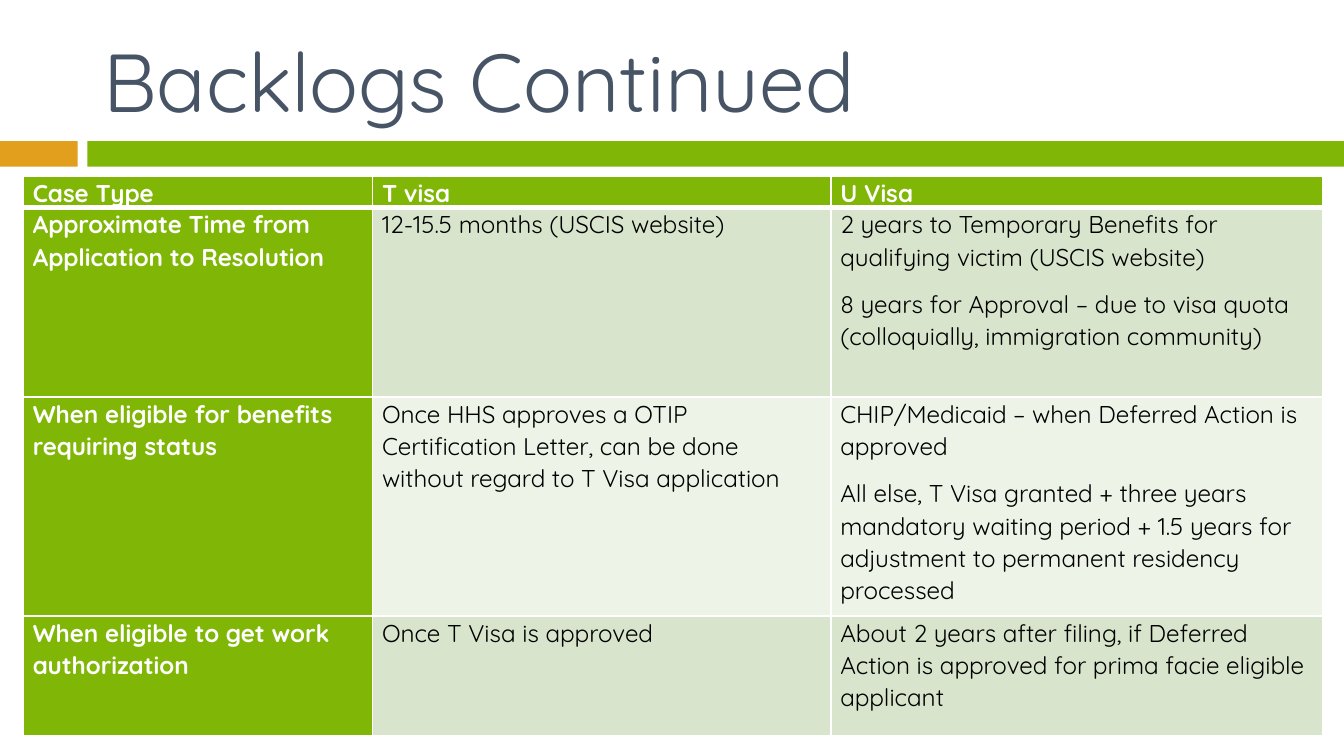
import pptx
import pptx.dml.color
import pptx.enum.shapes
import pptx.enum.text
import pptx.oxml.ns
import pptx.util
from dataclasses import dataclass
from lxml import etree

Cm = pptx.util.Cm
Pt = pptx.util.Pt
qn = pptx.oxml.ns.qn


@dataclass(frozen=True)
class Theme:
    font: str = "Quicksand"
    title: int = 44
    body: int = 13
    slate: str = "465466"
    gold: str = "E29F1D"
    green: str = "80B606"
    pale: str = "D8E5CC"
    mist: str = "EDF3E7"
    white: str = "FFFFFF"
    black: str = "000000"


THEME = Theme()

WIDTHS = (6.6, 8.66, 9.3)
HEIGHTS = (0.58, 3.58, 4.14, 2.26)

# Each cell is a list of paragraphs
ROWS = [
    [["Case Type"], ["T visa"], ["U Visa"]],
    [
        ["Approximate Time from Application to Resolution"],
        ["12-15.5 months (USCIS website)"],
        ["2 years to Temporary Benefits for qualifying victim (USCIS website)",
         "8 years for Approval – due to visa quota "
         "(colloquially, immigration community)"],
    ],
    [
        ["When eligible for benefits requiring status"],
        ["Once HHS approves a OTIP Certification Letter, can be done "
         "without regard to T Visa application"],
        ["CHIP/Medicaid – when Deferred Action is approved",
         "All else, T Visa granted + three years mandatory waiting period "
         "+ 1.5 years for adjustment to permanent residency processed"],
    ],
    [
        ["When eligible to get work authorization"],
        ["Once T Visa is approved"],
        ["About 2 years after filing, if Deferred Action is approved "
         "for prima facie eligible applicant"],
    ],
]


def rgb(code):
    return pptx.dml.color.RGBColor.from_string(code)


def write(frame, *texts, size, color, bold=False, line=1.0, gap=0):
    """Fill a text frame, with the gap between paragraphs in points."""
    frame.word_wrap = True
    for i, text in enumerate(texts):
        para = frame.paragraphs[0] if i == 0 else frame.add_paragraph()
        para.line_spacing = line
        para.space_after = Pt(gap if i < len(texts) - 1 else 0)
        run = para.add_run()
        run.text = text
        font = run.font
        font.name, font.size, font.bold = THEME.font, Pt(size), bold
        font.color.rgb = rgb(color)


def add_bar(slide, left, width, color):
    bar = slide.shapes.add_shape(
        pptx.enum.shapes.MSO_SHAPE.RECTANGLE,
        Cm(left), Cm(2.67), Cm(width), Cm(0.48))
    bar.shadow.inherit = False
    bar.fill.solid()
    bar.fill.fore_color.rgb = rgb(color)
    bar.line.fill.background()


def add_title(slide, text):
    box = slide.shapes.add_textbox(Cm(1.7), Cm(0.48), Cm(22.66), Cm(2.06))
    box.text_frame.vertical_anchor = pptx.enum.text.MSO_ANCHOR.MIDDLE
    write(box.text_frame, text, size=THEME.title, color=THEME.slate)


def add_edges(cell, top, bottom):
    """Draw white cell borders; widths are in points."""
    props = cell._tc.get_or_add_tcPr()
    for side, width in (("L", 1), ("R", 1), ("T", top), ("B", bottom)):
        edge = etree.SubElement(props, qn(f"a:ln{side}"), w=str(Pt(width)))
        fill = etree.SubElement(edge, qn("a:solidFill"))
        etree.SubElement(fill, qn("a:srgbClr"), val=THEME.white)


def add_cell(cell, texts, row, col):
    head = row == 0 or col == 0
    band = THEME.pale if row % 2 else THEME.mist
    cell.margin_left = cell.margin_right = Cm(0.18)
    cell.margin_top = cell.margin_bottom = 0
    add_edges(cell, top=3 if row == 1 else 1, bottom=3 if row == 0 else 1)
    cell.fill.solid()
    cell.fill.fore_color.rgb = rgb(THEME.green if head else band)
    write(cell.text_frame, *texts, size=THEME.body, bold=head,
          color=THEME.white if head else THEME.black, line=1.07, gap=8)


def add_grid(slide):
    grid = slide.shapes.add_table(
        len(ROWS), len(WIDTHS), Cm(0.44), Cm(3.33),
        Cm(sum(WIDTHS)), Cm(sum(HEIGHTS))).table
    grid.horz_banding = False
    for col, width in zip(grid.columns, WIDTHS):
        col.width = Cm(width)
    for row, height in zip(grid.rows, HEIGHTS):
        row.height = Cm(height)
    for r, cells in enumerate(ROWS):
        for c, texts in enumerate(cells):
            add_cell(grid.cell(r, c), texts, r, c)


def main():
    deck = pptx.Presentation()
    deck.slide_width, deck.slide_height = Cm(25.4), Cm(14.29)
    slide = deck.slides.add_slide(deck.slide_layouts[6])

    # Accent bars under the title
    add_bar(slide, 0, 1.47, THEME.gold)
    add_bar(slide, 1.65, 23.75, THEME.green)

    # Title and comparison table
    add_title(slide, "Backlogs Continued")
    add_grid(slide)

    deck.save("out.pptx")


if __name__ == "__main__":
    main()
